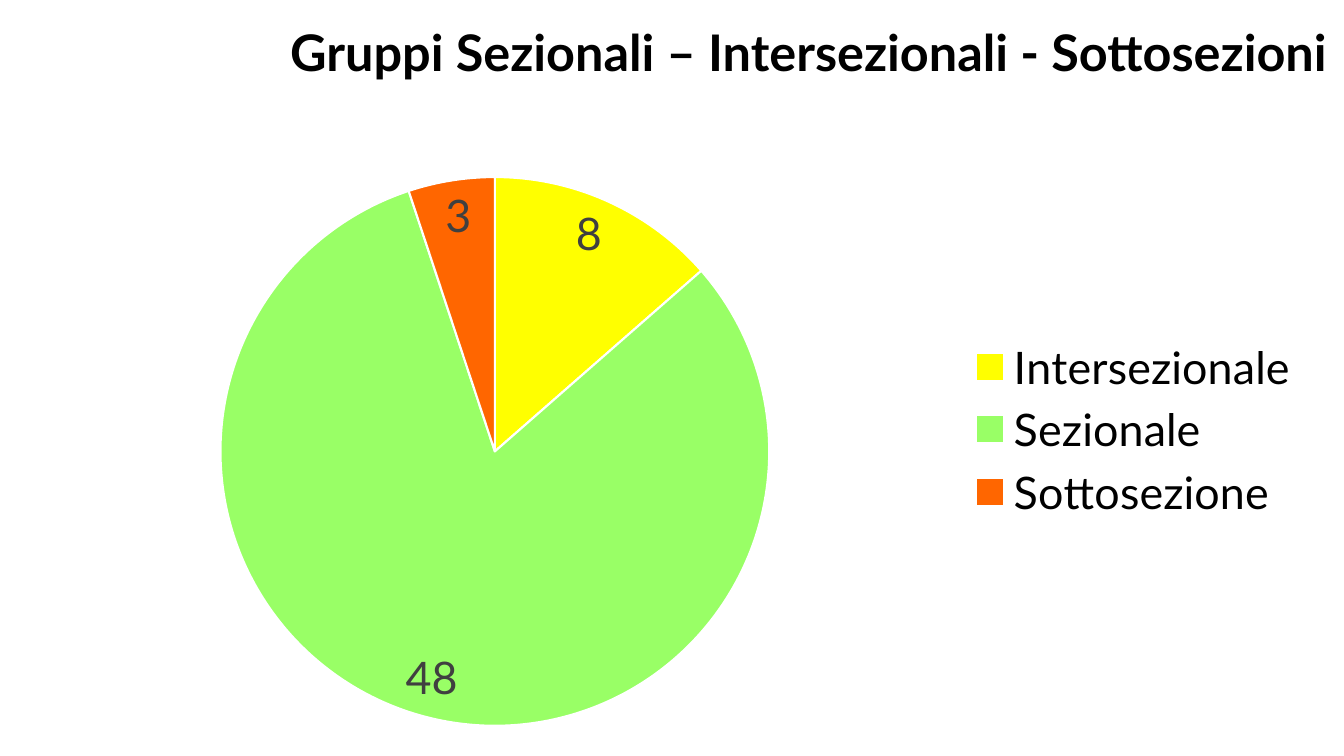
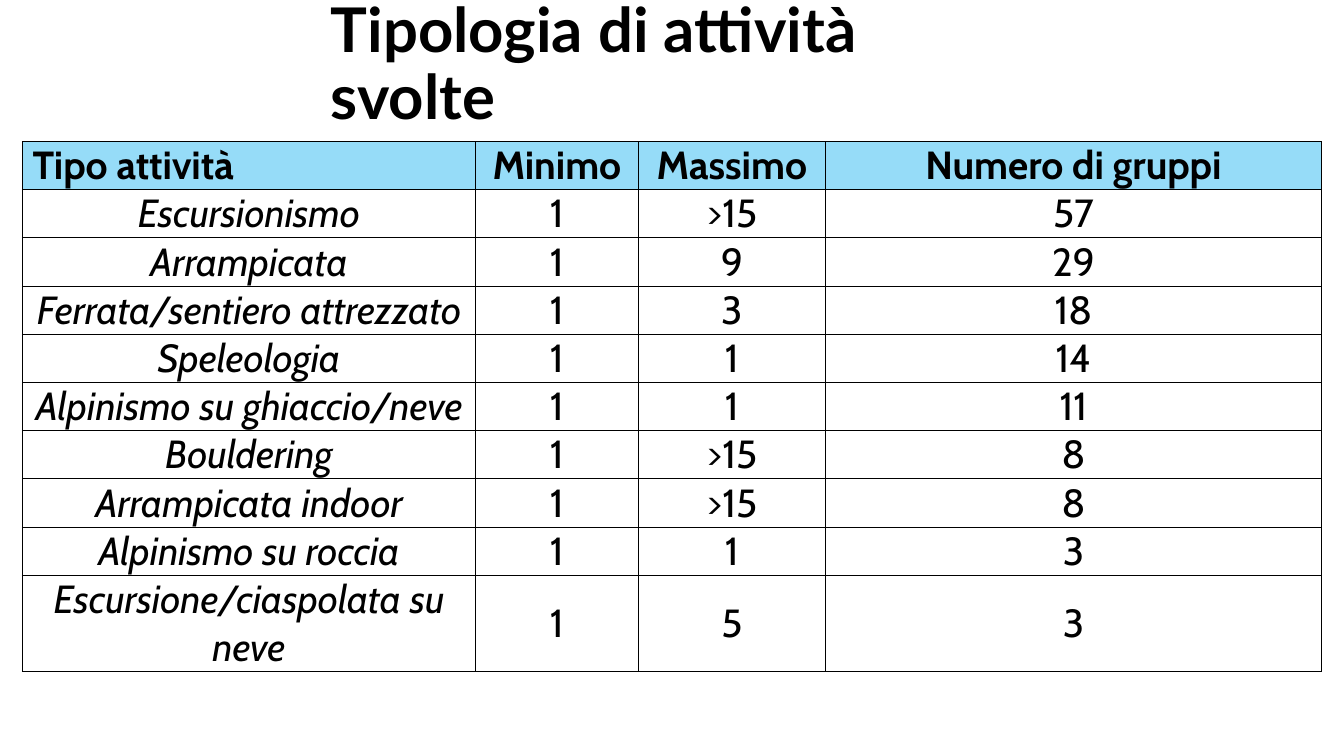
from dataclasses import dataclass

from lxml import etree
from pptx import Presentation
from pptx.chart.data import CategoryChartData
from pptx.dml.color import RGBColor
from pptx.enum.chart import XL_CHART_TYPE, XL_LABEL_POSITION, XL_LEGEND_POSITION
from pptx.enum.text import MSO_ANCHOR, PP_ALIGN
from pptx.oxml.ns import qn
from pptx.util import Pt


@dataclass(frozen=True)
class Theme:
    black: str = "000000"
    label: str = "404040"
    white: str = "FFFFFF"
    header: str = "96DCF8"
    main_font: str = "Lato"
    table_font: str = "Cabin"
    title_size: float = 44
    chart_title_size: float = 36
    chart_size: float = 32
    table_size: float = 28
    border: float = 0.5
    slice_border: float = 1.5


THEME = Theme()

# Content
GROUPS_TITLE = "Gruppi Sezionali – Intersezionali - Sottosezioni"
GROUPS = [  # kind, number of groups, slice colour
    ("Intersezionale", 8, "FFFF00"),
    ("Sezionale", 48, "99FF66"),
    ("Sottosezione", 3, "FF6600"),
]
ACTIVITIES_TITLE = "Tipologia di attività svolte"
ACTIVITIES = [
    ("Tipo attività", "Minimo", "Massimo", "Numero di gruppi"),
    ("Escursionismo", "1", ">15", "57"),
    ("Arrampicata", "1", "9", "29"),
    ("Ferrata/sentiero attrezzato", "1", "3", "18"),
    ("Speleologia", "1", "1", "14"),
    ("Alpinismo su ghiaccio/neve", "1", "1", "11"),
    ("Bouldering", "1", ">15", "8"),
    ("Arrampicata indoor", "1", ">15", "8"),
    ("Alpinismo su roccia", "1", "1", "3"),
    ("Escursione/ciaspolata su neve", "1", "5", "3"),
]

# Geometry in points: left, top, width, height
SLIDE_SIZE = (960, 540)
CHART_BOX = (10, 11, 940, 519)
PIE_BOX = (157.5, 126.5, 392, 392)
LEGEND_AT = (687.4, 236.5)
GROUPS_TITLE_BOX = (200, 10, 760, 59)
ACTIVITIES_TITLE_BOX = (229, 2.5, 502.5, 89)
TABLE_AT = (15.8, 101)
COLUMNS = (324, 116, 134, 354)
ROW_HEIGHT = 34.4
HEADER_INDENT = 7.5
CELL_INSET = 0.4


def style_font(font, *, size, color=THEME.black, name=THEME.main_font,
               bold=False, italic=False):
    font.size, font.name = Pt(size), name
    font.bold, font.italic = bold, italic
    font.color.rgb = RGBColor.from_string(color)


def write(frame, text, *, align=PP_ALIGN.LEFT, spacing=None, **font_format):
    paragraph = frame.paragraphs[0]
    paragraph.alignment = align
    paragraph.line_spacing = spacing
    run = paragraph.add_run()
    run.text = text
    style_font(run.font, **font_format)


def set_title(slide, text, box, size):
    title = slide.shapes.title
    title.left, title.top, title.width, title.height = map(Pt, box)
    frame = title.text_frame
    frame.word_wrap = True
    frame.margin_right = 0
    frame.vertical_anchor = MSO_ANCHOR.MIDDLE
    write(frame, text, spacing=0.9, size=size, bold=True)


def place_in_chart(part, box, inner=False):
    """Set a chart part's place, as fractions of the chart area."""
    for old in part.findall(qn("c:layout")):
        part.remove(old)
    layout = etree.Element(qn("c:layout"))
    manual = etree.SubElement(layout, qn("c:manualLayout"))
    left, top, width, height = CHART_BOX
    fractions = [(box[0] - left) / width, (box[1] - top) / height]
    fractions += [side / whole for side, whole in zip(box[2:], (width, height))]
    settings = [("layoutTarget", "inner")] if inner else []
    settings += [("xMode", "edge"), ("yMode", "edge")]
    settings += [(tag, f"{value:.4f}") for tag, value in zip("xywh", fractions)]
    for tag, value in settings:
        etree.SubElement(manual, qn(f"c:{tag}"), val=value)
    overlay = part.find(qn("c:overlay"))
    if overlay is None:
        part.insert(0, layout)
    else:
        overlay.addprevious(layout)


def add_borders(cell):
    properties = cell._tc.get_or_add_tcPr()
    for side in "LRTB":
        line = etree.SubElement(properties, qn(f"a:ln{side}"), w=str(Pt(THEME.border)))
        fill = etree.SubElement(line, qn("a:solidFill"))
        etree.SubElement(fill, qn("a:srgbClr"), val=THEME.black)


def build_groups(slide):
    set_title(slide, GROUPS_TITLE, GROUPS_TITLE_BOX, THEME.chart_title_size)
    data = CategoryChartData()
    data.categories = [kind for kind, _, _ in GROUPS]
    data.add_series("Series 1", [count for _, count, _ in GROUPS])
    chart = slide.shapes.add_chart(
        XL_CHART_TYPE.PIE, *map(Pt, CHART_BOX), data).chart
    style_font(chart.font, size=THEME.chart_size)
    chart.has_title = False
    chart.has_legend = True
    chart.legend.position = XL_LEGEND_POSITION.RIGHT
    chart.legend.include_in_layout = False
    style_font(chart.legend.font, size=THEME.chart_size)

    # Slices and their values
    pie = chart.plots[0]
    pie.vary_by_categories = True
    for index, (_, _, color) in enumerate(GROUPS):
        part = pie.series[0].points[index].format
        part.fill.solid()
        part.fill.fore_color.rgb = RGBColor.from_string(color)
        part.line.color.rgb = RGBColor.from_string(THEME.white)
        part.line.width = Pt(THEME.slice_border)
    pie.has_data_labels = True
    values = pie.data_labels
    values.show_value, values.show_percentage = True, False
    values.position = XL_LABEL_POSITION.BEST_FIT
    style_font(values.font, size=THEME.chart_size, color=THEME.label)

    # Placement, and a clear background so that the title shows
    area = chart.element.find(qn("c:chart"))
    place_in_chart(area.find(qn("c:plotArea")), PIE_BOX, inner=True)
    place_in_chart(area.find(qn("c:legend")), LEGEND_AT)
    background = etree.Element(qn("c:spPr"))
    etree.SubElement(background, qn("a:noFill"))
    outline = etree.SubElement(background, qn("a:ln"))
    etree.SubElement(outline, qn("a:noFill"))
    area.addnext(background)


def build_activities(slide):
    set_title(slide, ACTIVITIES_TITLE, ACTIVITIES_TITLE_BOX, THEME.title_size)

    # The last activity takes two lines
    heights = [ROW_HEIGHT] * (len(ACTIVITIES) - 1) + [2 * ROW_HEIGHT]
    table = slide.shapes.add_table(
        len(ACTIVITIES), len(COLUMNS), *map(Pt, TABLE_AT),
        Pt(sum(COLUMNS)), Pt(sum(heights))).table
    table.horz_banding = False
    for column, width in zip(table.columns, COLUMNS):
        column.width = Pt(width)
    for row, height in zip(table.rows, heights):
        row.height = Pt(height)

    for r, activity in enumerate(ACTIVITIES):
        for c, text in enumerate(activity):
            cell = table.cell(r, c)
            is_header, is_name = r == 0, c == 0
            is_corner = is_header and is_name
            cell.vertical_anchor = MSO_ANCHOR.MIDDLE
            cell.margin_left = Pt(HEADER_INDENT if is_corner else CELL_INSET)
            cell.margin_right = cell.margin_top = Pt(CELL_INSET)
            cell.margin_bottom = 0
            add_borders(cell)
            if is_header:
                cell.fill.solid()
                cell.fill.fore_color.rgb = RGBColor.from_string(THEME.header)
            else:
                cell.fill.background()
            write(cell.text_frame, text,
                  align=PP_ALIGN.LEFT if is_corner else PP_ALIGN.CENTER,
                  size=THEME.table_size, name=THEME.table_font,
                  bold=is_header, italic=is_name and not is_header)


def main():
    deck = Presentation()
    deck.slide_width, deck.slide_height = map(Pt, SLIDE_SIZE)
    title_only = deck.slide_layouts[5]
    for build in (build_groups, build_activities):
        build(deck.slides.add_slide(title_only))
    deck.save("out.pptx")


if __name__ == "__main__":
    main()
